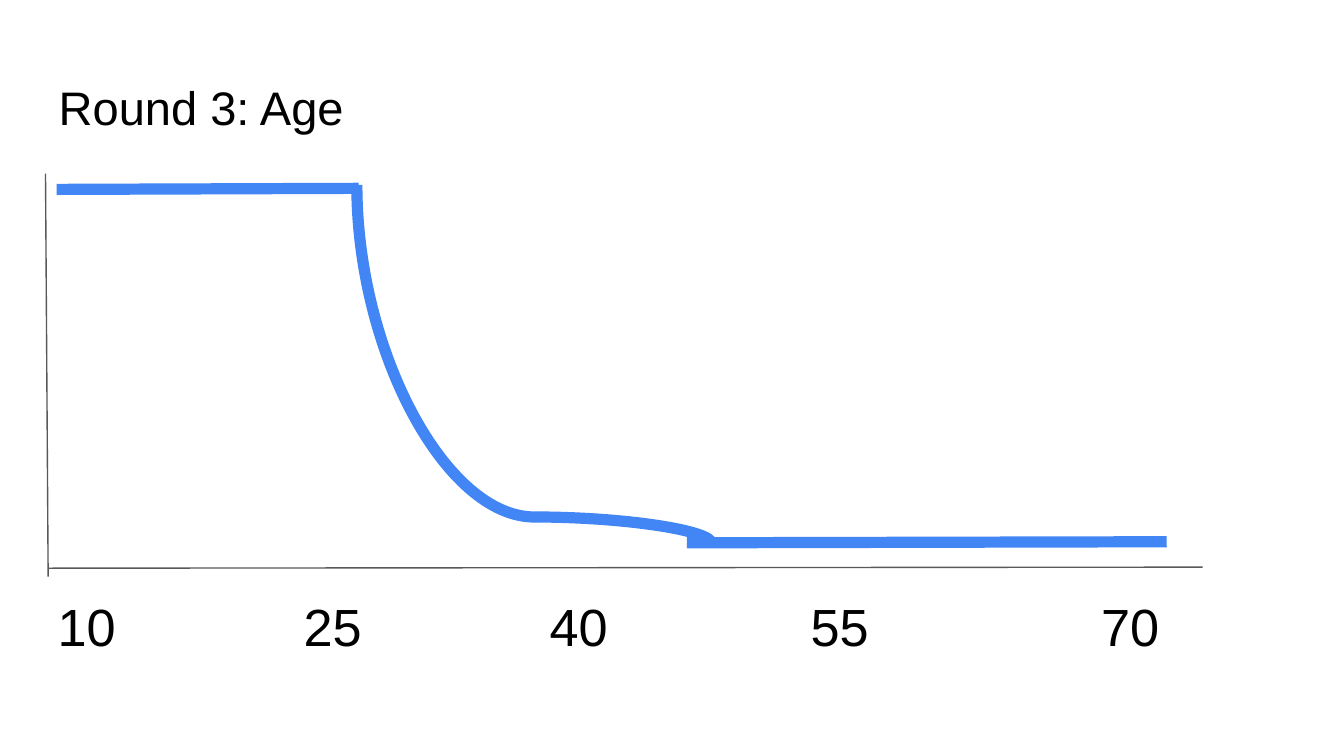
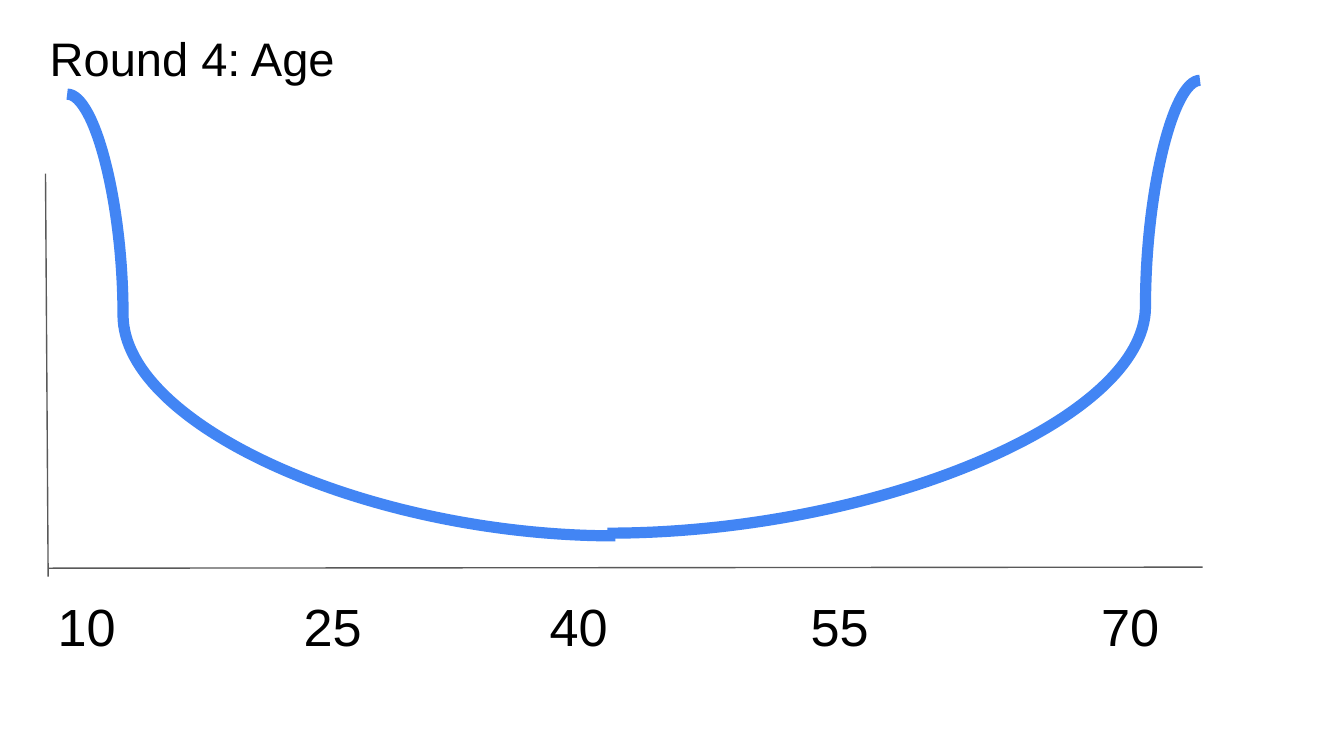
"""Build two slides with age curves over a shared pair of axes."""
from dataclasses import dataclass
from typing import Any

from lxml.etree import SubElement
from pptx import Presentation
from pptx.dml.color import RGBColor
from pptx.enum.shapes import MSO_CONNECTOR
from pptx.enum.text import MSO_ANCHOR, MSO_AUTO_SIZE
from pptx.oxml.ns import qn
from pptx.slide import Slide
from pptx.util import Cm, Pt

BLACK, GREY, BLUE = "000000", "595959", "4285F4"
FONT = "Arial"
AGES = ("10", "25", "40", "55", "70")
AGE_STOPS = (4.65, 9.3, 14.23, 19.72)
FRAME_FORMAT = {"word_wrap": True, "vertical_anchor": MSO_ANCHOR.TOP,
                "margin_left": Cm(0.25), "margin_right": Cm(0.25)}
TITLE_FORMAT = FRAME_FORMAT | {"margin_top": Cm(0.25), "margin_bottom": Cm(0.25)}
AGES_FORMAT = FRAME_FORMAT | {"margin_top": Cm(0.13), "margin_bottom": Cm(0.13),
                              "auto_size": MSO_AUTO_SIZE.SHAPE_TO_FIT_TEXT}


@dataclass(frozen=True)
class Stroke:
    """A line in centimetres; a bend makes it a curve, a turn rotates it in degrees."""
    start: tuple[float, float]
    end: tuple[float, float]
    colour: str = BLUE
    width: float = 6
    bend: float | None = None
    turn: int = 0


@dataclass(frozen=True)
class Label:
    """A one-line text with its place in centimetres, size in points and tab stops."""
    text: str
    place: tuple[float, float, float, float]
    size: float
    frame: dict[str, Any]
    stops: tuple[float, ...] = ()


@dataclass(frozen=True)
class Round:
    """The title and the curve strokes of one slide."""
    title: str
    corner: tuple[float, float]
    strokes: tuple[Stroke, ...]


AXES = (
    Stroke((0.86, 3.28), (0.91, 10.9), GREY, 0.75),
    Stroke((22.73, 10.72), (0.91, 10.74), GREY, 0.75),
)
AGE_LABEL = Label("\t".join(AGES), (0.84, 11.1, 22.48, 1.45), 28, AGES_FORMAT, AGE_STOPS)
ROUNDS = (
    Round("Round 3: Age", (0.86, 1.24), (
        Stroke((13.49, 3.53), (6.71, 10.24), bend=0.926, turn=270),
        Stroke((6.78, 3.56), (1.07, 3.58)),
        Stroke((22.05, 10.24), (12.98, 10.26)),
    )),
    Round("Round 4: Age", (0.69, 0.3), (
        Stroke((1.27, 1.78), (11.63, 10.13), bend=0.102),
        Stroke((11.48, 10.08), (22.68, 1.52), bend=0.908),
    )),
)


def colour_of(value: str) -> RGBColor:
    """Turn a hex string into a colour."""
    return RGBColor.from_string(value)


def apply_format(target: Any, values: dict[str, Any]) -> None:
    """Set every named attribute on the target."""
    for name, value in values.items():
        setattr(target, name, value)


def draw_stroke(page: Slide, stroke: Stroke) -> None:
    """Draw a straight or curved connector without a shadow."""
    kind = MSO_CONNECTOR.STRAIGHT if stroke.bend is None else MSO_CONNECTOR.CURVE
    ends = [Cm(value) for value in (*stroke.start, *stroke.end)]
    connector = page.shapes.add_connector(kind, *ends)
    connector.line.width = Pt(stroke.width)
    connector.line.color.rgb = colour_of(stroke.colour)
    properties = connector.element.spPr
    SubElement(properties, qn("a:effectLst"))
    if stroke.bend is not None:
        guides = properties.find(f"{qn('a:prstGeom')}/{qn('a:avLst')}")
        SubElement(guides, qn("a:gd"), name="adj1", fmla=f"val {round(stroke.bend * 100000)}")
    if stroke.turn:
        properties.find(qn("a:xfrm")).set("rot", str(stroke.turn * 60000))


def draw_label(page: Slide, label: Label) -> None:
    """Draw a text box, spacing its parts with tab stops."""
    box = page.shapes.add_textbox(*(Cm(value) for value in label.place))
    apply_format(box.text_frame, label.frame)
    para = box.text_frame.paragraphs[0]
    if label.stops:
        tabs = SubElement(para._p.get_or_add_pPr(), qn("a:tabLst"))
        for stop in label.stops:
            SubElement(tabs, qn("a:tab"), pos=str(Cm(stop)), algn="l")
    span = para.add_run()
    span.text = label.text
    apply_format(span.font, {"name": FONT, "size": Pt(label.size)})
    span.font.color.rgb = colour_of(BLACK)


def main() -> None:
    """Build and save the deck."""
    deck = Presentation()
    apply_format(deck, {"slide_width": Cm(25.4), "slide_height": Cm(14.29)})
    for item in ROUNDS:
        page = deck.slides.add_slide(deck.slide_layouts[6])
        draw_label(page, Label(item.title, (*item.corner, 23.67, 1.6), 25.2, TITLE_FORMAT))
        for stroke in AXES + item.strokes:
            draw_stroke(page, stroke)
        draw_label(page, AGE_LABEL)
    deck.save("out.pptx")


if __name__ == "__main__":
    main()
